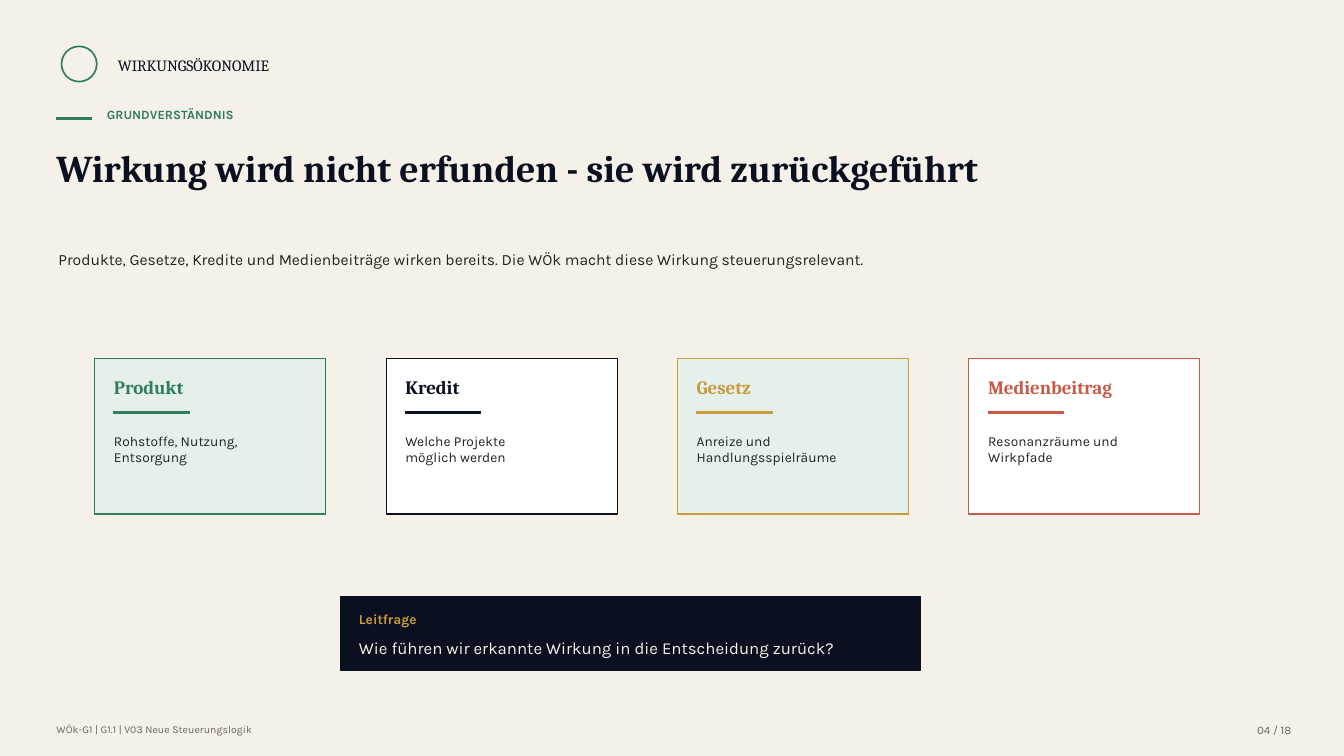
from pptx import Presentation
from pptx.dml.color import RGBColor
from pptx.enum.shapes import MSO_SHAPE
from pptx.enum.text import MSO_ANCHOR, PP_ALIGN
from pptx.util import Inches, Pt

RECTANGLE = MSO_SHAPE.RECTANGLE
OVAL = MSO_SHAPE.OVAL
TOP = MSO_ANCHOR.TOP
LEFT = PP_ALIGN.LEFT
RIGHT = PP_ALIGN.RIGHT

CREAM = RGBColor(0xF6, 0xF1, 0xE8)
NAVY = RGBColor(0x0B, 0x10, 0x20)
GREEN = RGBColor(0x2F, 0x7D, 0x5C)
GOLD = RGBColor(0xC8, 0x9B, 0x3C)
RED = RGBColor(0xC8, 0x5A, 0x4A)
MINT = RGBColor(0xE5, 0xF0, 0xEA)
WHITE = RGBColor(0xFF, 0xFF, 0xFF)
INK = RGBColor(0x22, 0x22, 0x22)
GREY = RGBColor(0x6C, 0x65, 0x5B)

SERIF = "Cambria"
SANS = "Karla"

# Text formats
BRAND = {"name": SERIF, "size": Pt(11.2)}
EYEBROW = {"name": SANS, "size": Pt(9), "bold": True}
TITLE = {"name": SERIF, "size": Pt(27), "bold": True}
LEAD = {"name": SANS, "size": Pt(11.2)}
CARD_TITLE = {"name": SERIF, "size": Pt(13.5), "bold": True}
CARD_BODY = {"name": SANS, "size": Pt(9.8)}
QUESTION_LABEL = {"name": SANS, "size": Pt(9.8), "bold": True}
QUESTION = {"name": SANS, "size": Pt(12)}
FOOTER = {"name": SANS, "size": Pt(7.5)}
PAGE_NUMBER = {"name": SANS, "size": Pt(8.2)}

CARD_LEFT, CARD_TOP, CARD_STEP = 0.94, 3.56, 2.89
CARD_PADDING = 0.19
CARDS = [
    ("Produkt", ["Rohstoffe, Nutzung,", "Entsorgung"], GREEN, MINT),
    ("Kredit", ["Welche Projekte", "möglich werden"], NAVY, WHITE),
    ("Gesetz", ["Anreize und", "Handlungsspielräume"], GOLD, MINT),
    ("Medienbeitrag", ["Resonanzräume und", "Wirkpfade"], RED, WHITE),
]


def add_box(slide, kind, left, top, width, height, fill, line, line_width=0.75):
    shape = slide.shapes.add_shape(
        kind, Inches(left), Inches(top), Inches(width), Inches(height))
    shape.shadow.inherit = False
    if fill is None:
        shape.fill.background()
    else:
        shape.fill.solid()
        shape.fill.fore_color.rgb = fill
    shape.line.color.rgb = line
    shape.line.width = Pt(line_width)


def add_rule(slide, left, top, width, color):
    add_box(slide, RECTANGLE, left, top, width, 0.02, color, color, 0)


def add_text(slide, left, top, width, height, lines, text_format, color, align=LEFT):
    text_box = slide.shapes.add_textbox(
        Inches(left), Inches(top), Inches(width), Inches(height))
    frame = text_box.text_frame
    frame_format = {"word_wrap": True, "vertical_anchor": TOP, "margin_left": 0,
                    "margin_top": 0, "margin_right": 0, "margin_bottom": 0}
    for name, value in frame_format.items():
        setattr(frame, name, value)
    frame.text = "\n".join(lines)
    for paragraph in frame.paragraphs:
        paragraph.alignment = align
        for name, value in text_format.items():
            setattr(paragraph.font, name, value)
        paragraph.font.color.rgb = color


def add_card(slide, left, title, body, accent, fill):
    add_box(slide, RECTANGLE, left, CARD_TOP, 2.29, 1.54, fill, accent)
    inner_left = left + CARD_PADDING
    add_text(slide, inner_left, CARD_TOP + 0.17, 1.92, 0.25, [title], CARD_TITLE, accent)
    add_rule(slide, inner_left, CARD_TOP + 0.52, 0.75, accent)
    add_text(slide, inner_left, CARD_TOP + 0.73, 1.92, 0.65, body, CARD_BODY, INK)


def main():
    presentation = Presentation()
    presentation.slide_width = Inches(13.33)
    presentation.slide_height = Inches(7.5)
    slide = presentation.slides.add_slide(presentation.slide_layouts[6])
    slide.background.fill.solid()
    slide.background.fill.fore_color.rgb = CREAM

    # Header with a plain emblem
    add_box(slide, OVAL, 0.61, 0.46, 0.35, 0.35, None, GREEN, 1.2)
    add_text(slide, 1.17, 0.55, 2.6, 0.23, ["WIRKUNGSÖKONOMIE"], BRAND, NAVY)
    add_rule(slide, 0.56, 1.17, 0.35, GREEN)
    add_text(slide, 1.06, 1.06, 4.79, 0.25, ["GRUNDVERSTÄNDNIS"], EYEBROW, GREEN)

    # Title and lead sentence
    add_text(slide, 0.56, 1.44, 9.69, 0.94,
             ["Wirkung wird nicht erfunden - sie wird zurückgeführt"], TITLE, NAVY)
    add_text(slide, 0.58, 2.48, 8.75, 0.44,
             ["Produkte, Gesetze, Kredite und Medienbeiträge wirken bereits. "
              "Die WÖk macht diese Wirkung steuerungsrelevant."], LEAD, INK)

    # Cards
    for index, card in enumerate(CARDS):
        add_card(slide, CARD_LEFT + index * CARD_STEP, *card)

    # Guiding question
    add_box(slide, RECTANGLE, 3.38, 5.92, 5.75, 0.73, NAVY, NAVY)
    add_text(slide, 3.56, 6.06, 5.38, 0.25, ["Leitfrage"], QUESTION_LABEL, GOLD)
    add_text(slide, 3.56, 6.33, 5.38, 0.23,
             ["Wie führen wir erkannte Wirkung in die Entscheidung zurück?"],
             QUESTION, CREAM)

    # Footer
    add_text(slide, 0.56, 7.17, 5.83, 0.19,
             ["WÖk-G1 | G1.1 | V03 Neue Steuerungslogik"], FOOTER, GREY)
    add_text(slide, 12.08, 7.17, 0.73, 0.19, ["04 / 18"], PAGE_NUMBER, GREY, RIGHT)

    presentation.save("out.pptx")


if __name__ == "__main__":
    main()
